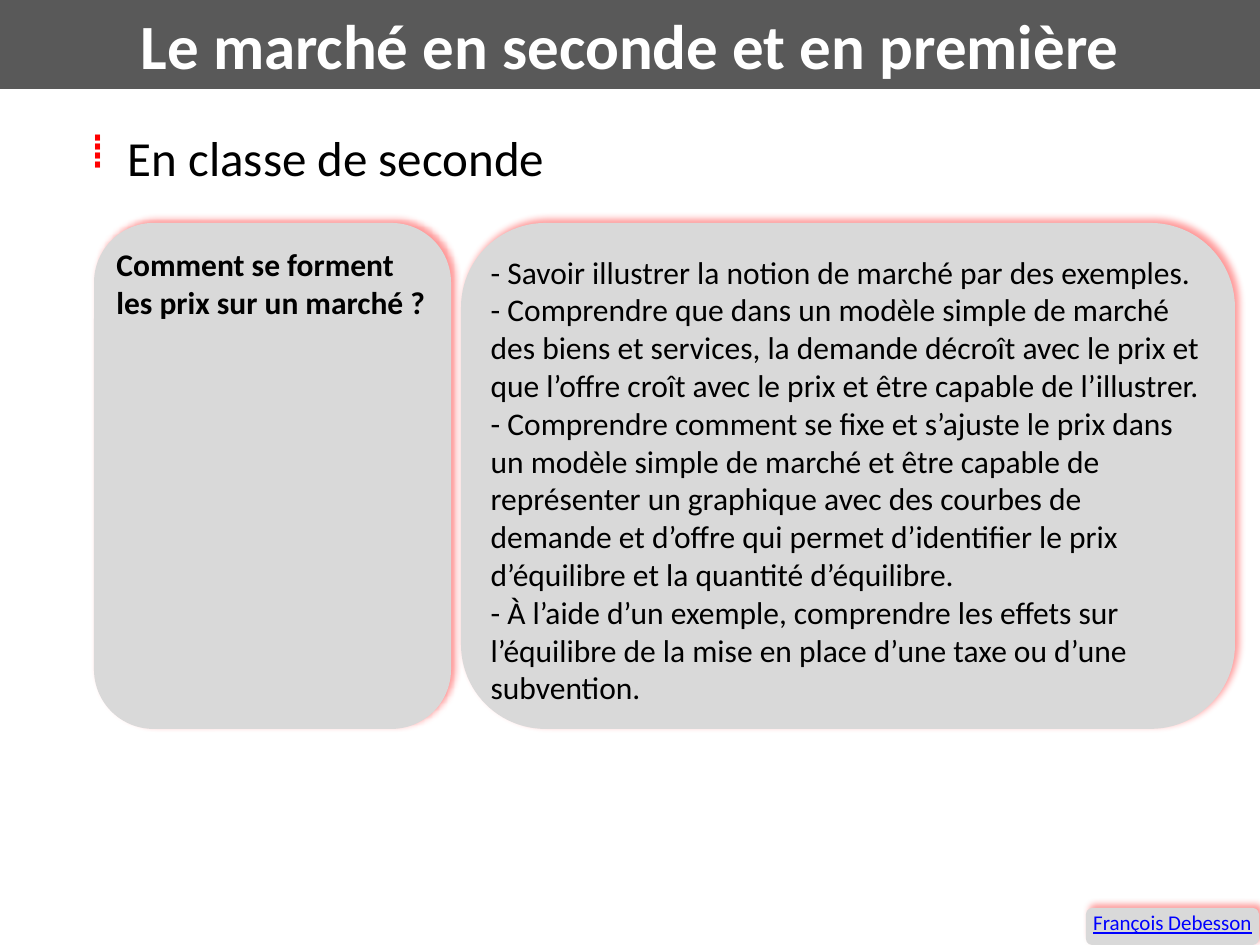
from dataclasses import dataclass

from lxml.etree import SubElement
from pptx import Presentation
from pptx.dml.color import RGBColor
from pptx.enum.shapes import MSO_SHAPE
from pptx.enum.text import MSO_ANCHOR as Anchor, MSO_AUTO_SIZE as AutoSize, PP_ALIGN as Align
from pptx.oxml.ns import qn
from pptx.util import Emu, Pt

PX_PER_INCH = 126
INSET = 5
FONT = "Calibri"

BLACK = RGBColor(0x00, 0x00, 0x00)
WHITE = RGBColor(0xFF, 0xFF, 0xFF)
DARK_GRAY = RGBColor(0x59, 0x59, 0x59)
LIGHT_GRAY = RGBColor(0xD9, 0xD9, 0xD9)
RED = RGBColor(0xFF, 0x00, 0x00)
BLUE = RGBColor(0x00, 0x00, 0xFF)


@dataclass(frozen=True)
class Box:
    left: int
    top: int
    width: int
    height: int

    def emu(self) -> tuple[Emu, ...]:
        return tuple(px(n) for n in (self.left, self.top, self.width, self.height))


@dataclass(frozen=True)
class Card:
    box: Box
    lines: tuple[str, ...]
    size: int = 18
    color: RGBColor = BLACK
    bold: bool = False
    underline: bool = False
    align: Align = Align.LEFT
    inset: int = INSET


CARDS = (
    Card(Box(94, 223, 357, 506),
         ("Comment se forment les prix sur un marché ?",), bold=True),
    Card(Box(461, 223, 774, 506), (
        "- Savoir illustrer la notion de marché par des exemples.",
        "- Comprendre que dans un modèle simple de marché des biens et services, "
        "la demande décroît avec le prix et que l’offre croît avec le prix et "
        "être capable de l’illustrer.",
        "- Comprendre comment se fixe et s’ajuste le prix dans un modèle simple "
        "de marché et être capable de représenter un graphique avec des courbes "
        "de demande et d’offre qui permet d’identifier le prix d’équilibre et la "
        "quantité d’équilibre.",
        "- À l’aide d’un exemple, comprendre les effets sur l’équilibre de la "
        "mise en place d’une taxe ou d’une subvention.",
    )),
    Card(Box(1086, 908, 173, 37), ("François Debesson",), size=12, color=BLUE,
         underline=True, align=Align.CENTER, inset=0),
)


def px(length: int) -> Emu:
    return Emu(round(length * 914400 / PX_PER_INCH))


def write(shape, *lines: str, size: int, color: RGBColor = BLACK, bold: bool = False,
          underline: bool = False, align: Align = Align.LEFT,
          anchor: Anchor = Anchor.TOP, inset: int = INSET) -> None:
    frame = shape.text_frame
    frame.word_wrap = True
    frame.auto_size = AutoSize.NONE
    frame.vertical_anchor = anchor
    frame.margin_left = frame.margin_right = px(inset)
    frame.margin_top = frame.margin_bottom = px(inset)
    frame.text = "\n".join(lines)
    for paragraph in frame.paragraphs:
        paragraph.alignment = align
        font = paragraph.runs[0].font
        font.name, font.size, font.bold = FONT, Pt(size), bold
        font.underline = underline
        font.color.rgb = color


def add_red_glow(shape) -> None:
    """Cast a soft red shadow towards the upper right."""
    shape.shadow.inherit = False
    effects = shape._element.spPr.find(qn("a:effectLst"))
    shadow = SubElement(effects, qn("a:outerShdw"), blurRad=str(Pt(4)), dist=str(Pt(3)),
                        dir=str(315 * 60000), algn="bl", rotWithShape="0")
    color = SubElement(shadow, qn("a:srgbClr"), val=str(RED))
    SubElement(color, qn("a:alpha"), val="40000")


def add_card(slide, card: Card) -> None:
    shape = slide.shapes.add_shape(MSO_SHAPE.ROUNDED_RECTANGLE, *card.box.emu())
    shape.fill.solid()
    shape.fill.fore_color.rgb = LIGHT_GRAY
    shape.line.fill.background()
    add_red_glow(shape)
    write(shape, *card.lines, size=card.size, color=card.color, bold=card.bold,
          underline=card.underline, align=card.align, inset=card.inset)


def set_title(slide, text: str, box: Box) -> None:
    title = slide.shapes.title
    title.left, title.top, title.width, title.height = box.emu()
    title.fill.solid()
    title.fill.fore_color.rgb = DARK_GRAY
    write(title, text, size=36, color=WHITE, bold=True, align=Align.CENTER,
          anchor=Anchor.MIDDLE)


def add_bulleted_heading(slide, text: str, box: Box) -> None:
    heading = slide.shapes.add_textbox(*box.emu())
    write(heading, text, size=28, align=Align.JUSTIFY)
    heading.text_frame.auto_size = AutoSize.SHAPE_TO_FIT_TEXT
    paragraph = heading.text_frame.paragraphs[0]
    paragraph.line_spacing = 0.8
    paragraph.space_before = Pt(5.6)
    properties = paragraph._p.get_or_add_pPr()
    properties.set("marL", str(px(49)))
    properties.set("indent", str(px(-38)))
    bullet_color = SubElement(properties, qn("a:buClr"))
    SubElement(bullet_color, qn("a:srgbClr"), val=str(RED))
    SubElement(properties, qn("a:buChar"), char="⁞")


def main() -> None:
    deck = Presentation()
    deck.slide_width, deck.slide_height = px(1260), px(945)
    slide = deck.slides.add_slide(deck.slide_layouts[5])
    set_title(slide, "Le marché en seconde et en première", Box(0, 0, 1260, 89))
    add_bulleted_heading(slide, "En classe de seconde", Box(74, 134, 1111, 59))
    for card in CARDS:
        add_card(slide, card)
    deck.save("out.pptx")


if __name__ == "__main__":
    main()
